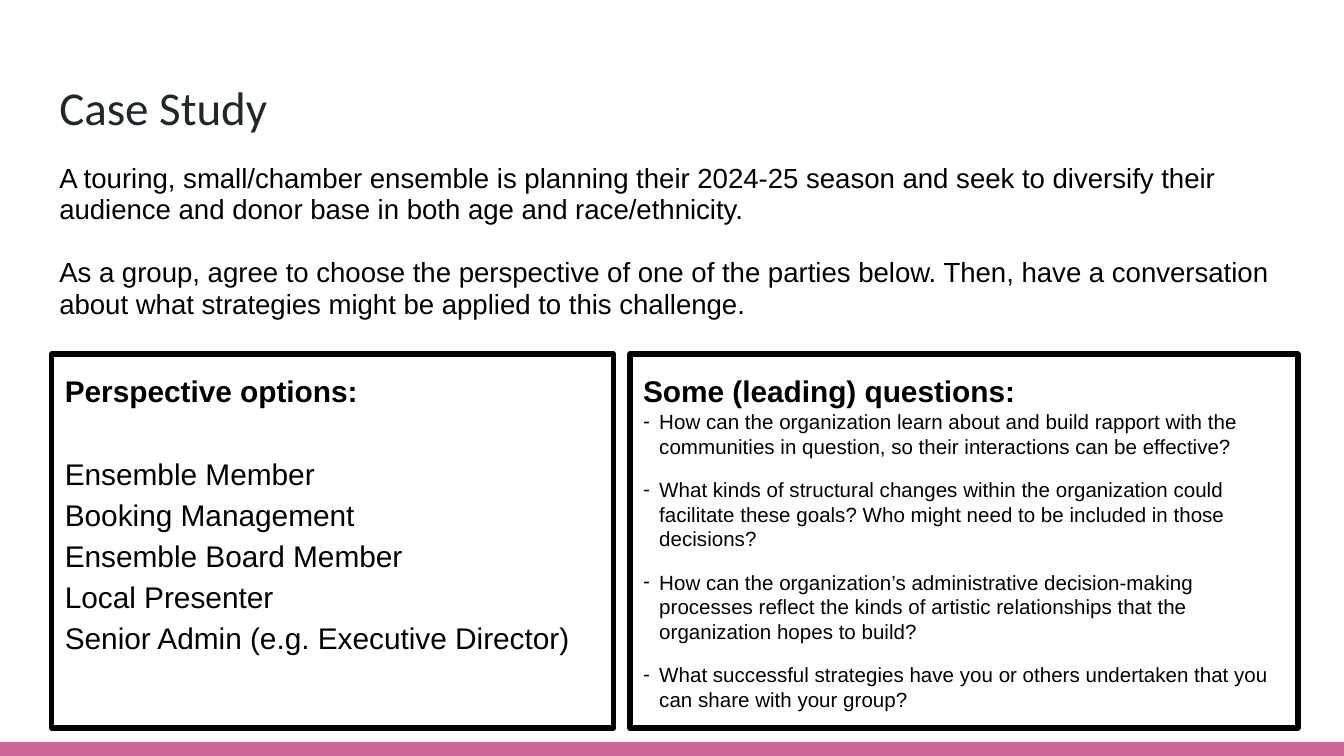
import pptx
import pptx.util
import pptx.dml.color
import pptx.enum.shapes
import pptx.enum.text
import pptx.oxml.ns
import lxml.etree

deck = pptx.Presentation()
deck.slide_width = pptx.util.Inches(10)
deck.slide_height = deck.slide_width * 9 // 16
column = deck.slide_width / 100
row = deck.slide_height / 56.25
slide = deck.slides.add_slide(deck.slide_layouts[1])


def colour(hex_string):
    return pptx.dml.color.RGBColor.from_string(hex_string)


def write(frame, lines, size, font="Arial", ink="000000", spacing=1.0):
    frame.text = "\n".join(lines)
    frame.word_wrap = True
    frame.auto_size = pptx.enum.text.MSO_AUTO_SIZE.NONE
    frame.vertical_anchor = pptx.enum.text.MSO_ANCHOR.TOP
    frame.margin_left = frame.margin_right = pptx.util.Inches(0.1)
    frame.margin_top = frame.margin_bottom = pptx.util.Inches(0.1)
    for paragraph in frame.paragraphs:
        paragraph.alignment = pptx.enum.text.PP_ALIGN.LEFT
        paragraph.line_spacing = spacing
        paragraph.space_before = pptx.util.Pt(0)
        for run in paragraph.runs:
            run.font.size = pptx.util.Pt(size)
            run.font.name = font
            run.font.color.rgb = colour(ink)


heading = slide.shapes.title
scenario = slide.placeholders[1]
for holder, top, height in ((heading, 4.87, 6.26), (scenario, 11.13, 18.2)):
    holder.left, holder.width = int(3.41 * column), int(93.2 * column)
    holder.top, holder.height = int(top * row), int(height * row)

write(heading.text_frame, ["Case Study"], 25.2, "Calibri", "202729")
write(scenario.text_frame, [
    "A touring, small/chamber ensemble is planning their 2024-25 season and seek to diversify their audience and donor base in both age and race/ethnicity.",
    "As a group, agree to choose the perspective of one of the parties below. Then, have a conversation about what strategies might be applied to this challenge.",
], 14.8, spacing=0.95)
for paragraph in scenario.text_frame.paragraphs:
    properties = paragraph._p.get_or_add_pPr()
    properties.set("marL", "0")
    properties.set("indent", "0")
    lxml.etree.SubElement(properties, pptx.oxml.ns.qn("a:buNone"))
scenario.text_frame.paragraphs[1].space_before = pptx.util.Pt(17)

footer_band = slide.shapes.add_shape(
    pptx.enum.shapes.MSO_SHAPE.RECTANGLE,
    0, int(55.2 * row), deck.slide_width, int(1.05 * row))
footer_band.shadow.inherit = False
footer_band.fill.solid()
footer_band.fill.fore_color.rgb = colour("CC6699")
footer_band.line.fill.background()

panels = []
for left, width, lines in (
    (3.84, 41.8, [
        "Perspective options:",
        "Ensemble Member",
        "Booking Management",
        "Ensemble Board Member",
        "Local Presenter",
        "Senior Admin (e.g. Executive Director)",
    ]),
    (46.87, 49.7, [
        "Some (leading) questions:",
        "How can the organization learn about and build rapport with the communities in question, so their interactions can be effective?",
        "What kinds of structural changes within the organization could facilitate these goals? Who might need to be included in those decisions?",
        "How can the organization’s administrative decision-making processes reflect the kinds of artistic relationships that the organization hopes to build?",
        "What successful strategies have you or others undertaken that you can share with your group?",
    ]),
):
    panel = slide.shapes.add_shape(
        pptx.enum.shapes.MSO_SHAPE.RECTANGLE,
        int(left * column), int(26.36 * row), int(width * column), int(27.8 * row))
    panel.shadow.inherit = False
    panel.fill.background()
    panel.line.color.rgb = colour("000000")
    panel.line.width = pptx.util.Pt(3)
    write(panel.text_frame, lines, 16, spacing=1.15)
    panel.text_frame.paragraphs[0].runs[0].font.bold = True
    panels.append(panel.text_frame.paragraphs)

options, questions = panels
options[1].space_before = pptx.util.Pt(22)
for number, question in enumerate(questions[1:]):
    question.line_spacing = 1.0
    question.space_before = pptx.util.Pt(10 if number else 0)
    question.runs[0].font.size = pptx.util.Pt(11)
    question.font.size = pptx.util.Pt(11)
    properties = question._p.get_or_add_pPr()
    properties.set("marL", str(pptx.util.Inches(0.12)))
    properties.set("indent", str(-pptx.util.Inches(0.12)))
    for tag, key, value in (("a:buFont", "typeface", "Arial"), ("a:buChar", "char", "-")):
        lxml.etree.SubElement(properties, pptx.oxml.ns.qn(tag)).set(key, value)
    properties.append(properties.find(pptx.oxml.ns.qn("a:defRPr")))

deck.save("out.pptx")
